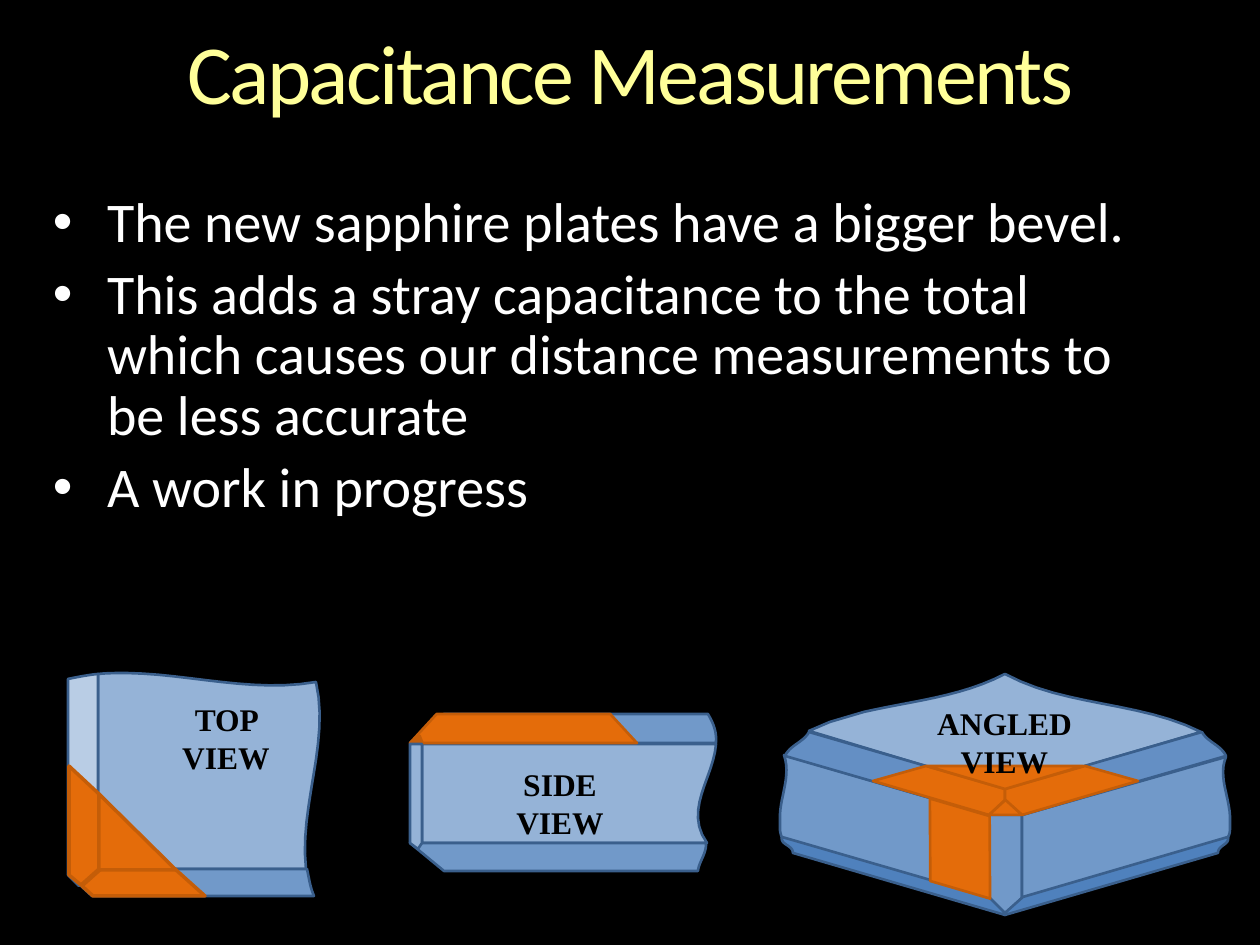
from lxml.etree import SubElement
from pptx import Presentation
from pptx.dml.color import RGBColor
from pptx.enum.shapes import MSO_SHAPE as Preset
from pptx.enum.text import PP_ALIGN as Align
from pptx.oxml.ns import qn
from pptx.util import Emu, Pt

PX = 914400 / 126
BLACK = RGBColor(0x00, 0x00, 0x00)
WHITE = RGBColor(0xFF, 0xFF, 0xFF)
YELLOW = RGBColor(0xFF, 0xFF, 0x99)
PALE = RGBColor(0xB9, 0xCD, 0xE5)
LIGHT = RGBColor(0x95, 0xB3, 0xD7)
MEDIUM = RGBColor(0x71, 0x99, 0xC9)
BEVEL = RGBColor(0x64, 0x8F, 0xC4)
DEEP = RGBColor(0x4F, 0x81, 0xBD)
EDGE = RGBColor(0x3A, 0x5F, 0x8C)
ORANGE = RGBColor(0xE4, 0x6C, 0x0A)
RUST = RGBColor(0xC4, 0x5D, 0x08)
CURVE_STEPS = 12


def face(view, fill, points, edge=EDGE, width=1.5):
    track = [points[0]]
    for point in points[1:]:
        if len(point) == 2:
            track.append(point)
            continue
        corners = [track[-1], point[0:2], point[2:4], point[4:6]]
        for step in range(1, CURVE_STEPS + 1):
            t = step / CURVE_STEPS
            weights = ((1 - t) ** 3, 3 * t * (1 - t) ** 2, 3 * t * t * (1 - t), t ** 3)
            track.append(tuple(sum(w * c[axis] for w, c in zip(weights, corners)) for axis in (0, 1)))
    track = [(x * PX, y * PX) for x, y in track]
    builder = view.shapes.build_freeform(*track[0])
    builder.add_line_segments(track[1:], close=True)
    part = builder.convert_to_shape()
    part.shadow.inherit = False
    part.fill.solid()
    part.fill.fore_color.rgb = fill
    part.line.color.rgb = edge
    part.line.width = Pt(width)


def electrode(view, preset, box, fill=ORANGE, width=1.5, rotation=0, adjust=None):
    part = view.shapes.add_shape(preset, *[Emu(round(v * PX)) for v in box])
    part.shadow.inherit = False
    part.rotation = rotation
    if adjust is not None:
        part.adjustments[0] = adjust
    part.fill.solid()
    part.fill.fore_color.rgb = fill
    part.line.color.rgb = RUST
    part.line.width = Pt(width)
    return part


prs = Presentation()
prs.slide_width = Emu(round(1260 * PX))
prs.slide_height = Emu(round(945 * PX))
slide = prs.slides.add_slide(prs.slide_layouts[6])
slide.background.fill.solid()
slide.background.fill.fore_color.rgb = BLACK

heading = slide.shapes.add_textbox(*[Emu(round(v * PX)) for v in (53, 32, 1155, 92)]).text_frame
points = slide.shapes.add_textbox(*[Emu(round(v * PX)) for v in (53, 194, 1103, 333)]).text_frame
for frame in (heading, points):
    frame.word_wrap = True
    for side in ("left", "top", "right", "bottom"):
        setattr(frame, f"margin_{side}", 0)

title = heading.paragraphs[0]
title.alignment = Align.CENTER
title.line_spacing = 0.9
title_run = title.add_run()
title_run.text = "Capacitance Measurements"
for name, value in {"size": Pt(48), "name": "Calibri"}.items():
    setattr(title_run.font, name, value)
title_run.font.color.rgb = YELLOW
title_run.font._element.set("spc", "-150")

bullets = [
    "The new sapphire plates have a bigger bevel.",
    "This adds a stray capacitance to the total which causes our distance measurements to be less accurate",
    "A work in progress",
]
for number, sentence in enumerate(bullets):
    bullet = points.add_paragraph() if number else points.paragraphs[0]
    bullet.line_spacing = 0.9
    if number:
        bullet.space_before = Pt(6.5)
    properties = bullet._p.get_or_add_pPr()
    indent = round(54 * PX)
    properties.set("marL", str(indent))
    properties.set("indent", str(-indent))
    SubElement(properties, qn("a:buFont")).set("typeface", "Arial")
    SubElement(properties, qn("a:buChar")).set("char", "•")
    bullet_run = bullet.add_run()
    bullet_run.text = sentence
    for name, value in {"size": Pt(32), "name": "Calibri"}.items():
        setattr(bullet_run.font, name, value)
    bullet_run.font.color.rgb = WHITE

top = slide.shapes.add_group_shape()
face(top, LIGHT, [(127, 673), (190, 674, 253, 693, 316, 682), (330, 743, 299, 806, 306, 869),
                  (98, 869), (98, 674), (108, 673, 117, 673, 127, 673)])
face(top, PALE, [(98, 674), (98, 869), (79, 886), (68, 875), (68, 679), (78, 677, 88, 675, 98, 674)])
face(top, MEDIUM, [(99, 869), (307, 869), (309, 878, 310, 887, 314, 896), (92, 896), (81, 886)])
face(top, ORANGE, [(101, 869), (175, 869), (205, 896), (93, 896), (82, 886)], RUST, 2)
face(top, ORANGE, [(69, 766), (99, 794), (99, 869), (81, 885), (69, 875)], RUST, 2)
electrode(top, Preset.RIGHT_TRIANGLE, (99, 794, 77, 76), width=2)

side = slide.shapes.add_group_shape()
face(side, LIGHT, [(422, 744), (716, 744), (714, 777, 683, 810, 707, 843), (422, 843)])
face(side, MEDIUM, [(444, 714), (708, 714), (714, 724, 717, 733, 716, 743), (410, 743)])
electrode(side, Preset.TRAPEZOID, (410, 714, 227, 29), adjust=0.92)
electrode(side, Preset.ISOSCELES_TRIANGLE, (412, 736, 8, 11), RUST, rotation=248.3, adjust=0.41)
face(side, MEDIUM, [(410, 843), (706, 843), (707, 853, 699, 862, 698, 871), (444, 871)])
face(side, LIGHT, [(410, 744), (422, 744), (422, 843), (418, 849), (410, 843)])

angled = slide.shapes.add_group_shape()
face(angled, MEDIUM, [(784, 755), (988, 815), (988, 898), (782, 838), (781, 835, 780, 832, 780, 829),
                      (780, 814), (781, 795, 791, 775, 784, 755)])
face(angled, LIGHT, [(1005, 674), (1066, 707, 1139, 701, 1201, 732), (1005, 790), (809, 731),
                     (816, 728, 823, 725, 830, 722), (864, 712), (912, 701, 961, 697, 1005, 674)])
face(angled, MEDIUM, [(989, 815), (1022, 815), (1022, 898), (1005, 914), (989, 898)])
face(angled, MEDIUM, [(1226, 757), (1218, 776, 1229, 796, 1230, 816), (1230, 829),
                      (1230, 833, 1229, 836, 1227, 839), (1022, 898), (1022, 815)])
face(angled, BEVEL, [(809, 732), (1005, 789), (1005, 800), (989, 815), (785, 756),
                     (790, 745, 804, 742, 809, 732)])
face(angled, BEVEL, [(1202, 732), (1207, 742, 1221, 745, 1226, 756), (1022, 815), (1005, 800), (1005, 789)])
face(angled, ORANGE, [(926, 766), (1005, 789), (1005, 800), (989, 815), (873, 781)], RUST)
face(angled, ORANGE, [(1085, 766), (1005, 789), (1005, 800), (1022, 815), (1138, 781)], RUST)
electrode(angled, Preset.ISOSCELES_TRIANGLE, (989, 800, 33, 15))
electrode(angled, Preset.ISOSCELES_TRIANGLE, (927, 766, 156, 23), rotation=180)
face(angled, DEEP, [(1228, 837), (1230, 845, 1218, 845, 1218, 853), (1005, 915), (1005, 913), (1023, 897)])
face(angled, DEEP, [(782, 837), (989, 897), (1005, 913), (1005, 915), (793, 853),
                    (793, 845, 780, 845, 782, 837)])
front = electrode(angled, Preset.PARALLELOGRAM, (917, 809, 86, 79), rotation=16.4, adjust=0.3)
front._element.spPr.xfrm.set("flipH", "1")

labels = [
    (top, "TOP VIEW", (144, 694, 164, 89)),
    (side, "SIDE VIEW", (487, 759, 146, 63)),
    (angled, "ANGLED VIEW", (917, 698, 175, 69)),
]
for view, wording, box in labels:
    frame = view.shapes.add_textbox(*[Emu(round(v * PX)) for v in box]).text_frame
    frame.word_wrap = True
    label = frame.paragraphs[0]
    label.alignment = Align.CENTER
    label_run = label.add_run()
    label_run.text = wording
    for name, value in {"size": Pt(18), "name": "Times New Roman", "bold": True}.items():
        setattr(label_run.font, name, value)
    label_run.font.color.rgb = BLACK

prs.save("out.pptx")
